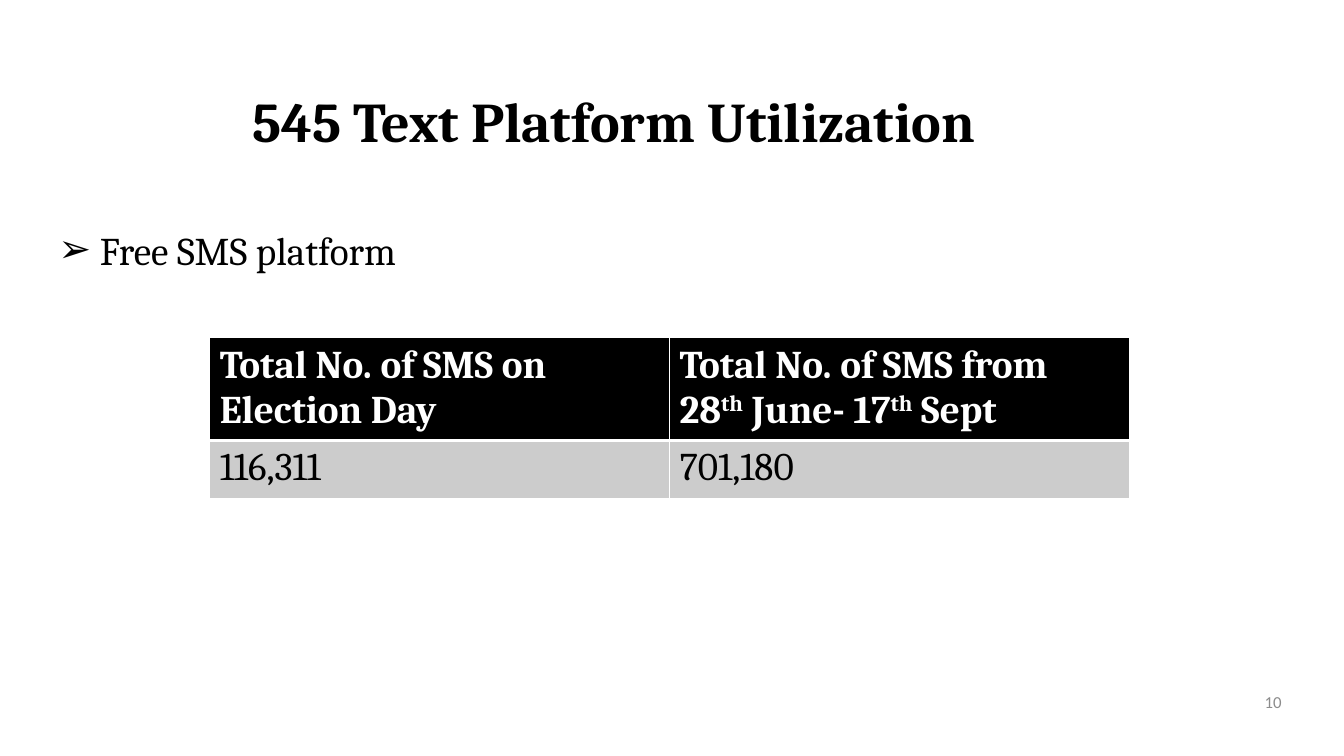
from lxml.etree import SubElement
from pptx import Presentation
from pptx.dml.color import RGBColor
from pptx.enum.text import MSO_ANCHOR as Anchor, MSO_AUTO_SIZE as AutoSize, PP_ALIGN as Align
from pptx.oxml import parse_xml
from pptx.oxml.ns import nsdecls, qn
from pptx.util import Pt

PX = 9144
BLACK, WHITE, GREY, SILVER = "000000", "FFFFFF", "8C8C8C", "CCCCCC"
SERIF, SANS = "Cambria", "Calibri"

HEADERS = [
    [("Total No. of SMS on Election Day", False)],
    [("Total No. of SMS from 28", False), ("th", True), (" June- 17", False),
     ("th", True), (" Sept", False)],
]
TOTALS = [[("116,311", False)], [("701,180", False)]]


def px(length):
    return length * PX


def colour(value):
    return RGBColor.from_string(value)


def place(shape, box):
    shape.left, shape.top, shape.width, shape.height = map(px, box)


def add_run(para, text, size, fill, bold=False, face=SERIF, raised=False):
    run = para.add_run()
    run.text = text
    run.font.name = face
    run.font.size = Pt(size)
    run.font.bold = bold
    run.font.color.rgb = colour(fill)
    if raised:
        run._r.get_or_add_rPr().set("baseline", "30000")


def prepare(shape, box, align=Align.LEFT, anchor=Anchor.TOP):
    place(shape, box)
    frame = shape.text_frame
    frame.word_wrap = True
    frame.auto_size = AutoSize.NONE
    frame.vertical_anchor = anchor
    para = frame.paragraphs[0]
    para.alignment = align
    para.space_before = Pt(0)
    return para


def add_title(page, box):
    para = prepare(page.shapes.title, box)
    add_run(para, "545 Text Platform Utilization", 40, BLACK, bold=True)


def add_list(page, box):
    para = prepare(page.placeholders[1], box)
    properties = para._p.get_or_add_pPr()
    properties.set("marL", str(px(41)))
    properties.set("indent", str(px(-41)))
    SubElement(properties, qn("a:buFont"), typeface="Wingdings 2")
    SubElement(properties, qn("a:buChar"), char="➢")
    properties.find(qn("a:buFont")).set("typeface", "Arial")
    add_run(para, "Free SMS platform", 28, BLACK)


def add_borders(cell, widths):
    properties = cell._tc.get_or_add_tcPr()
    for index, (side, width) in enumerate(zip("LRTB", widths)):
        properties.insert(index, parse_xml(
            f'<a:ln{side} {nsdecls("a")} w="{Pt(width)}"><a:solidFill>'
            f'<a:srgbClr val="{WHITE}"/></a:solidFill></a:ln{side}>'))


def add_totals_table(page, box):
    table = page.shapes.add_table(2, 2, *map(px, box)).table
    table.horz_banding = False
    for column in table.columns:
        column.width = px(box[2] // 2)
    rows = [
        (HEADERS, 102, BLACK, WHITE, True, (1, 1, 1, 3)),
        (TOTALS, box[3] - 102, SILVER, BLACK, False, (1, 1, 3, 1)),
    ]
    for index, (contents, height, fill, ink, bold, widths) in enumerate(rows):
        table.rows[index].height = px(height)
        for cell, parts in zip(table.rows[index].cells, contents):
            cell.fill.solid()
            cell.fill.fore_color.rgb = colour(fill)
            add_borders(cell, widths)
            for text, raised in parts:
                add_run(cell.text_frame.paragraphs[0], text, 28, ink, bold, raised=raised)


def add_page_number(page, box):
    number = page.shapes.add_textbox(*map(px, box))
    para = prepare(number, box, Align.RIGHT, Anchor.MIDDLE)
    add_run(para, "10", 12, GREY, face=SANS)


def main():
    deck = Presentation()
    deck.slide_width, deck.slide_height = px(1333), px(750)
    page = deck.slides.add_slide(deck.slide_layouts[1])
    add_page_number(page, (981, 676, 300, 40))
    add_title(page, (240, 81, 769, 77))
    add_list(page, (48, 219, 843, 88))
    add_totals_table(page, (208, 335, 912, 160))
    deck.save("out.pptx")


if __name__ == "__main__":
    main()
